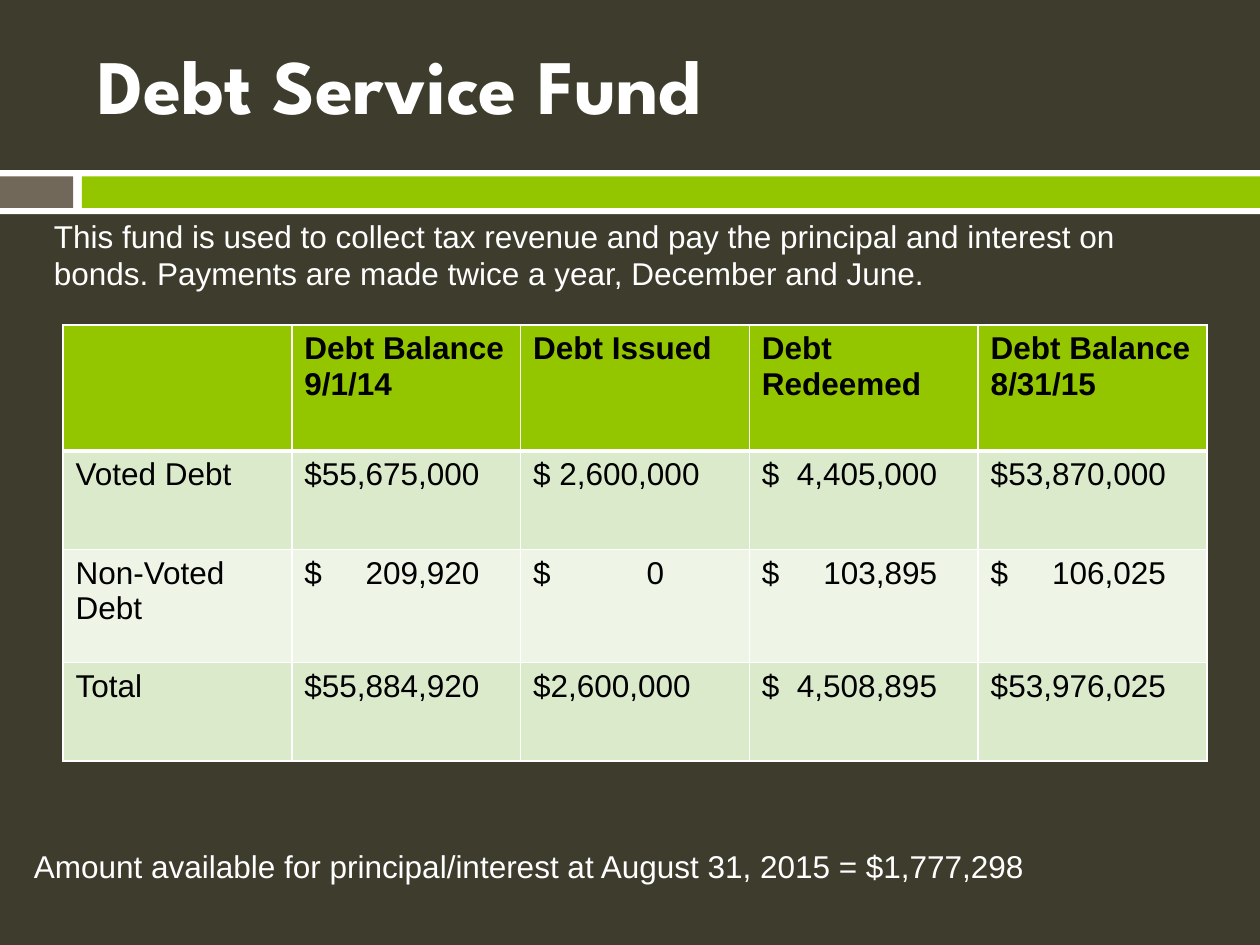
from lxml import etree
from pptx import Presentation
from pptx.dml.color import RGBColor
from pptx.enum.shapes import MSO_SHAPE
from pptx.enum.text import MSO_ANCHOR, MSO_AUTO_SIZE, PP_ALIGN
from pptx.oxml.ns import qn
from pptx.util import Inches, Pt

RECT = MSO_SHAPE.RECTANGLE
MIDDLE = MSO_ANCHOR.MIDDLE
LEFT = PP_ALIGN.LEFT
NO_AUTOFIT = MSO_AUTO_SIZE.NONE
GROW = MSO_AUTO_SIZE.SHAPE_TO_FIT_TEXT

DARK = RGBColor(0x3E, 0x3D, 0x2D)
WHITE = RGBColor(0xFF, 0xFF, 0xFF)
BLACK = RGBColor(0x00, 0x00, 0x00)
TAUPE = RGBColor(0x71, 0x68, 0x5A)
GREEN = RGBColor(0x94, 0xC6, 0x00)
PALE_GREEN = RGBColor(0xDC, 0xEA, 0xCC)
LIGHT_GREEN = RGBColor(0xEE, 0xF5, 0xE7)

TITLE_FONT = "League Spartan"
BODY_FONT = "Arial"

INTRO = (
    "This fund is used to collect tax revenue and pay the principal and "
    "interest on bonds. Payments are made twice a year, December and June."
)
AVAILABLE = "Amount available for principal/interest at August 31, 2015 = $1,777,298"

DEBT_ROWS = [
    ["", "Debt Balance 9/1/14", "Debt Issued", "Debt Redeemed", "Debt Balance 8/31/15"],
    ["Voted Debt", "$55,675,000", "$ 2,600,000", "$\t4,405,000", "$53,870,000"],
    ["Non-Voted Debt", "$\t209,920", "$\t0", "$\t103,895", "$\t106,025"],
    ["Total", "$55,884,920", "$2,600,000", "$\t4,508,895", "$53,976,025"],
]
ROW_HEIGHTS = [1, 0.78, 0.9, 0.78]
ROW_FILLS = [GREEN, PALE_GREEN, LIGHT_GREEN, PALE_GREEN]
AMOUNT_TAB = 1.39
ZERO_TAB = 1.04


def write_text(tf, text, font=BODY_FONT, size=18, color=WHITE, bold=False):
    p = tf.paragraphs[0]
    p.alignment = LEFT
    p.font.size = Pt(size)
    if text:
        r = p.add_run()
        r.text = text
        r.font.name = font
        r.font.size = Pt(size)
        r.font.bold = bold
        r.font.color.rgb = color
    return p


def add_title(s, text):
    sp = s.shapes.title
    sp.left, sp.top = Inches(0.67), Inches(0)
    sp.width, sp.height = Inches(8.67), Inches(1.33)
    tf = sp.text_frame
    tf.auto_size = NO_AUTOFIT
    tf.vertical_anchor = MIDDLE
    write_text(tf, text, font=TITLE_FONT, size=44, bold=True)


def add_bar(s, left, top, width, height, color):
    sp = s.shapes.add_shape(
        RECT, Inches(left), Inches(top), Inches(width), Inches(height)
    )
    sp.shadow.inherit = False
    sp.fill.solid()
    sp.fill.fore_color.rgb = color
    sp.line.fill.background()


def add_note(s, text, left, top, width, height):
    sp = s.shapes.add_textbox(
        Inches(left), Inches(top), Inches(width), Inches(height)
    )
    tf = sp.text_frame
    tf.word_wrap = True
    tf.auto_size = GROW
    write_text(tf, text)


def add_right_tab(p, position):
    p_pr = p._p.get_or_add_pPr()
    tabs = etree.Element(qn("a:tabLst"))
    etree.SubElement(tabs, qn("a:tab"), pos=str(Inches(position)), algn="r")
    p_pr.insert_element_before(tabs, "a:defRPr", "a:extLst")


def set_borders(cell, widths):
    tc_pr = cell._tc.get_or_add_tcPr()
    for i, (side, width) in enumerate(widths.items()):
        ln = etree.Element(qn(f"a:ln{side}"), w=str(Pt(width)))
        fill = etree.SubElement(ln, qn("a:solidFill"))
        etree.SubElement(fill, qn("a:srgbClr"), val=str(WHITE))
        tc_pr.insert(i, ln)


def add_debt_table(s, left, top, width):
    n_rows, n_cols = len(DEBT_ROWS), len(DEBT_ROWS[0])
    table = s.shapes.add_table(
        n_rows, n_cols, Inches(left), Inches(top),
        Inches(width), Inches(sum(ROW_HEIGHTS)),
    ).table
    for i, values in enumerate(DEBT_ROWS):
        table.rows[i].height = Inches(ROW_HEIGHTS[i])
        for j, text in enumerate(values):
            cell = table.cell(i, j)
            cell.fill.solid()
            cell.fill.fore_color.rgb = ROW_FILLS[i]
            set_borders(cell, {
                "L": 1, "R": 1,
                "T": 3 if i == 1 else 1,
                "B": 3 if i == 0 else 1,
            })
            p = write_text(cell.text_frame, text, color=BLACK, bold=i == 0)
            if "\t" in text:
                add_right_tab(p, ZERO_TAB if text.endswith("\t0") else AMOUNT_TAB)


def main():
    prs = Presentation()
    prs.slide_width, prs.slide_height = Inches(10), Inches(7.5)
    s = prs.slides.add_slide(prs.slide_layouts[5])
    s.background.fill.solid()
    s.background.fill.fore_color.rgb = DARK

    add_bar(s, 0, 1.35, 10, 0.35, WHITE)
    add_bar(s, 0, 1.4, 0.58, 0.25, TAUPE)
    add_bar(s, 0.65, 1.4, 9.35, 0.25, GREEN)
    add_title(s, "Debt Service Fund")
    add_note(s, INTRO, 0.33, 1.67, 9.33, 0.71)
    add_note(s, AVAILABLE, 0.17, 6.67, 9.33, 0.4)
    add_debt_table(s, 0.5, 2.58, 9.08)

    prs.save("out.pptx")


if __name__ == "__main__":
    main()
